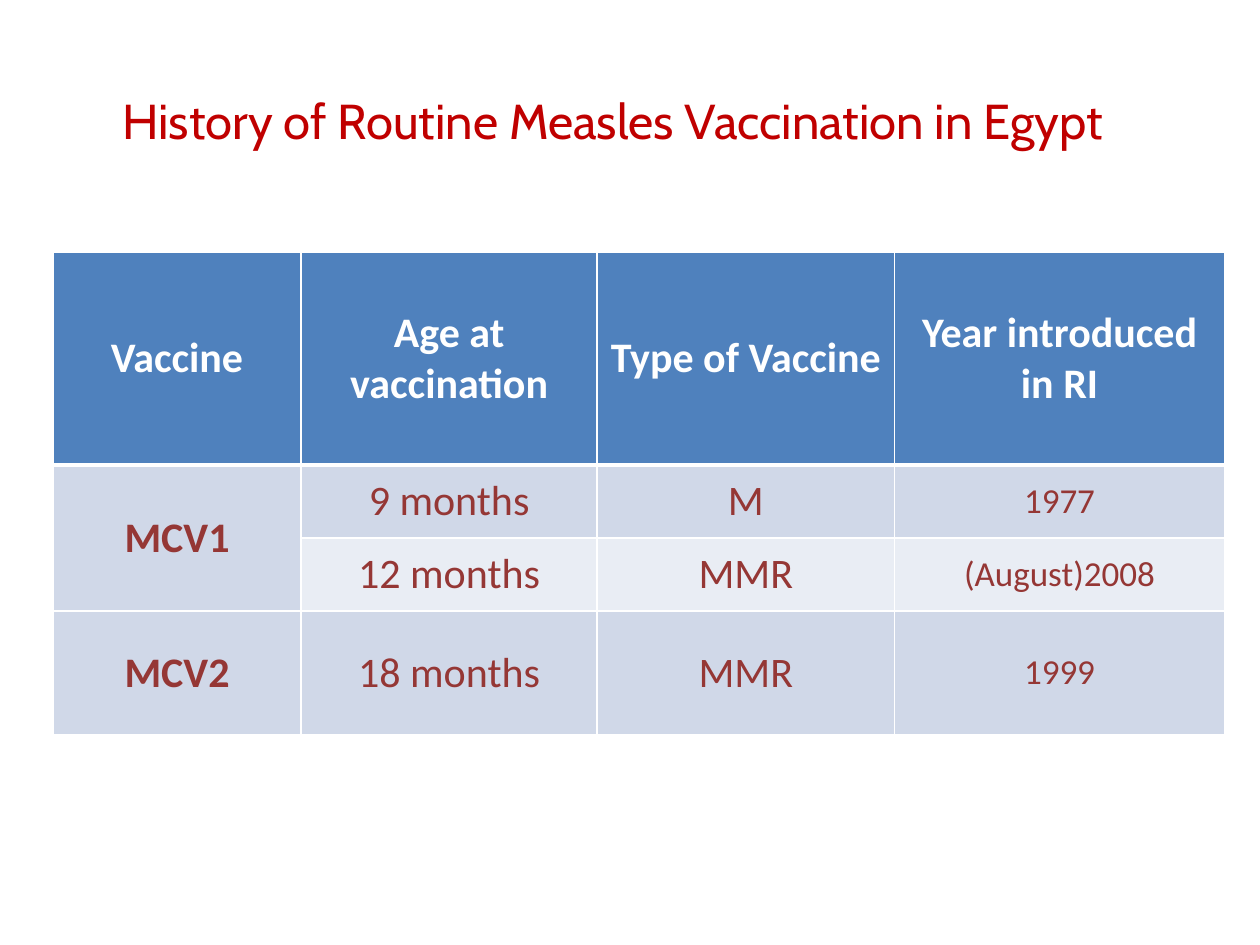
from dataclasses import dataclass

from lxml import etree
from pptx import Presentation
from pptx.dml.color import RGBColor
from pptx.enum.text import MSO_ANCHOR, PP_ALIGN
from pptx.oxml.ns import qn
from pptx.util import Inches, Pt

CENTER = PP_ALIGN.CENTER
MIDDLE = MSO_ANCHOR.MIDDLE
TITLE_ONLY = 5


@dataclass(frozen=True)
class Theme:
    title_font: str = "Cabin"
    body_font: str = "Calibri"
    title_color: str = "C00000"
    header_text: str = "FFFFFF"
    body_text: str = "953735"
    header_fill: str = "4F81BD"
    bands: tuple = ("D0D8E8", "E9EDF4")
    border: str = "FFFFFF"
    title_size: int = 28
    cell_size: int = 24
    year_size: int = 20
    thin_line: int = 1
    header_line: int = 3


class SlideBuilder:
    def __init__(self, presentation, theme):
        self.theme = theme
        self.width = presentation.slide_width
        self.height = presentation.slide_height
        layout = presentation.slide_layouts[TITLE_ONLY]
        self.slide = presentation.slides.add_slide(layout)

    def area(self, left, top, width, height):
        return (int(left * self.width), int(top * self.height),
                int(width * self.width), int(height * self.height))

    def style_text(self, text_frame, font, size, color, bold=False):
        for paragraph in text_frame.paragraphs:
            paragraph.alignment = CENTER
            for run in paragraph.runs:
                run.font.name = font
                run.font.size = Pt(size)
                run.font.bold = bold
                run.font.color.rgb = RGBColor.from_string(color)

    def title(self, text, area):
        shape = self.slide.shapes.title
        shape.left, shape.top, shape.width, shape.height = self.area(*area)
        shape.text_frame.text = text
        shape.text_frame.vertical_anchor = MIDDLE
        self.style_text(shape.text_frame, self.theme.title_font,
                        self.theme.title_size, self.theme.title_color)

    def borders(self, cell, top, bottom):
        properties = cell._tc.get_or_add_tcPr()
        thin = self.theme.thin_line
        sides = (("lnL", thin), ("lnR", thin), ("lnT", top), ("lnB", bottom))
        for index, (side, width) in enumerate(sides):
            line = etree.Element(qn(f"a:{side}"), w=str(Pt(width)))
            fill = etree.SubElement(line, qn("a:solidFill"))
            etree.SubElement(fill, qn("a:srgbClr"), val=self.theme.border)
            properties.insert(index, line)

    def cell(self, cell, text, row, column, last_column):
        theme = self.theme
        header = row == 0
        fill = theme.header_fill if header else theme.bands[(row - 1) % 2]
        cell.fill.solid()
        cell.fill.fore_color.rgb = RGBColor.from_string(fill)
        cell.vertical_anchor = MIDDLE
        cell.margin_left = cell.margin_right = Inches(0.09)
        cell.margin_top = cell.margin_bottom = Inches(0.04)
        cell.text_frame.text = text
        year = column == last_column and not header
        self.style_text(cell.text_frame, theme.body_font,
                        theme.year_size if year else theme.cell_size,
                        theme.header_text if header else theme.body_text,
                        bold=header or column == 0)
        self.borders(cell,
                     theme.header_line if row == 1 else theme.thin_line,
                     theme.header_line if header else theme.thin_line)

    def table(self, rows, area, column_widths, row_heights, merges):
        table = self.slide.shapes.add_table(
            len(rows), len(column_widths), *self.area(*area)).table
        for column, width in zip(table.columns, column_widths):
            column.width = Inches(width)
        for row, height in zip(table.rows, row_heights):
            row.height = Inches(height)
        for row, texts in enumerate(rows):
            for column, text in enumerate(texts):
                self.cell(table.cell(row, column), text, row, column,
                          len(texts) - 1)
        for first, last in merges:
            table.cell(*first).merge(table.cell(*last))


def main():
    presentation = Presentation()
    presentation.slide_width = Inches(10)
    presentation.slide_height = Inches(7.5)
    builder = SlideBuilder(presentation, Theme())
    builder.table(
        [
            ("Vaccine", "Age at vaccination", "Type of Vaccine",
             "Year introduced in RI"),
            ("MCV1", "9 months", "M", "1977"),
            ("", "12 months", "MMR", "(August)2008"),
            ("MCV2", "18 months", "MMR", "1999"),
        ],
        area=(0.042, 2 / 7.5, 0.93, 3.83 / 7.5),
        column_widths=(1.97, 2.35, 2.36, 2.62),
        row_heights=(1.69, 0.58, 0.58, 0.98),
        merges=[((1, 0), (2, 0))],
    )
    builder.title("History of Routine Measles Vaccination in Egypt",
                  area=(0.017, 0.67 / 7.5, 0.938, 0.56 / 7.5))
    presentation.save("out.pptx")


if __name__ == "__main__":
    main()
